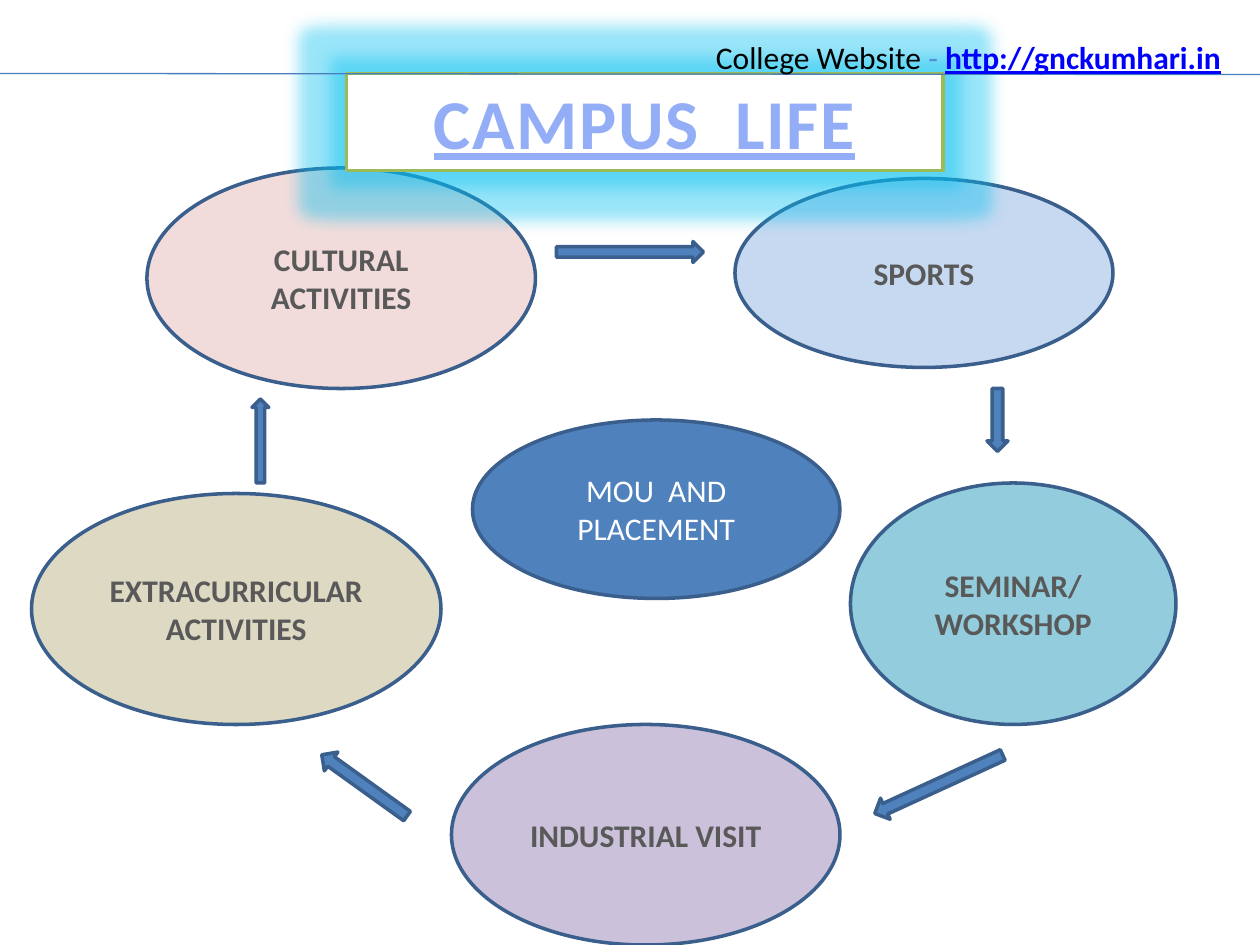
from collections import namedtuple
from dataclasses import dataclass

from lxml import etree
from pptx import Presentation
from pptx.dml.color import RGBColor
from pptx.enum import shapes, text
from pptx.oxml import ns
from pptx.util import Inches, Pt

COLS, ROWS = 120, 90
CELL = Inches(10) / COLS
Box = namedtuple("Box", "x y w h")
MSO = shapes.MSO_SHAPE


@dataclass(frozen=True)
class Theme:
    font: str = "Calibri"
    body: int = 18
    title: int = 40
    border: float = 2
    hairline: float = 0.75
    white: str = "FFFFFF"
    black: str = "000000"
    grey: str = "595959"
    blue: str = "4F81BD"
    edge: str = "3A5F8C"
    rule: str = "4B7EBC"
    green: str = "9BBB59"
    dash: str = "558ED5"
    link: str = "0000FF"
    heading: str = "93AEF7"
    glow: str = "00BEF0"
    rose: str = "F2DCDB"
    sand: str = "DDD9C3"
    sky: str = "C6D9F1"
    lilac: str = "CCC1DA"
    aqua: str = "93CDDD"


T = Theme()


def rgb(value):
    return RGBColor.from_string(value)


def place(region, x, y, w, h):
    return [round(n * CELL) for n in (region.x + x, region.y + y, w, h)]


def add_text(p, value, size=T.body, color=T.grey, bold=False, underline=False, spacing=0):
    r = p.add_run()
    r.text = value
    r.font.name, r.font.size = T.font, Pt(size)
    r.font.bold, r.font.underline = bold, underline
    r.font.color.rgb = rgb(color)
    if spacing:
        r._r.get_or_add_rPr().set("spc", str(spacing * 100))


def add_shape(slide, kind, at, fill, line=T.edge, rotation=0):
    sp = slide.shapes.add_shape(kind, *at)
    sp.shadow.inherit = False
    sp.fill.solid()
    sp.fill.fore_color.rgb = rgb(fill)
    sp.line.color.rgb = rgb(line)
    sp.line.width = Pt(T.border)
    sp.rotation = rotation
    return sp


def centered_paragraph(sp, anchor):
    tf = sp.text_frame
    tf.word_wrap = True
    tf.vertical_anchor = anchor
    p = tf.paragraphs[0]
    p.alignment = text.PP_ALIGN.CENTER
    return p


def add_glow(sp, color, radius, alpha):
    effects = sp._element.spPr.find(ns.qn("a:effectLst"))
    glow = etree.SubElement(effects, ns.qn("a:glow"), rad=str(Pt(radius)))
    clr = etree.SubElement(glow, ns.qn("a:srgbClr"), val=color)
    etree.SubElement(clr, ns.qn("a:alpha"), val=str(alpha * 1000))


def draw_cycle(slide, region):
    ovals = [
        ("CULTURAL ACTIVITIES", T.rose, (14, 0, 37, 21)),
        ("EXTRACURRICULAR ACTIVITIES", T.sand, (3, 31, 39, 22)),
        ("SPORTS", T.sky, (70, 1, 36, 18)),
        ("INDUSTRIAL VISIT", T.lilac, (43, 53, 37, 21)),
        ("SEMINAR/ WORKSHOP", T.aqua, (81, 30, 31, 23)),
        ("MOU  AND PLACEMENT", T.blue, (45, 24, 35, 17)),
    ]
    for label, fill, at in ovals:
        sp = add_shape(slide, MSO.OVAL, place(region, *at), fill)
        p = centered_paragraph(sp, text.MSO_ANCHOR.MIDDLE)
        center = fill == T.blue
        add_text(p, label, color=T.white if center else T.grey, bold=not center)

    arrows = [
        (MSO.RIGHT_ARROW, (53, 7, 14, 2), 0),
        (MSO.DOWN_ARROW, (94, 21, 2, 6), 0),
        (MSO.UP_ARROW, (33.6, 53.8, 2.2, 10), 305.7),
        (MSO.DOWN_ARROW, (88.3, 52, 2.2, 13.4), 65.4),
        (MSO.UP_ARROW, (24, 22, 1.6, 8), 0),
    ]
    for kind, at, rotation in arrows:
        add_shape(slide, kind, place(region, *at), T.blue, rotation=rotation)


def draw_header(slide, region):
    sp = add_shape(slide, MSO.RECTANGLE, place(region, 33, 7, 56.8, 9.25), T.white, T.green)
    add_glow(sp, T.glow, radius=18, alpha=40)
    p = centered_paragraph(sp, text.MSO_ANCHOR.TOP)
    add_text(p, "CAMPUS  LIFE", size=T.title, color=T.heading, bold=True,
             underline=True, spacing=1)

    x, y, w, h = place(region, 0, 7, region.w, 0.1)
    rule = slide.shapes.add_connector(shapes.MSO_CONNECTOR.STRAIGHT, x, y, x + w, y + h)
    rule.line.color.rgb = rgb(T.rule)
    rule.line.width = Pt(T.hairline)
    etree.SubElement(rule._element.spPr, ns.qn("a:effectLst"))

    tf = slide.shapes.add_textbox(*place(region, 67, 3, 52, 4.8)).text_frame
    tf.word_wrap = True
    p = tf.paragraphs[0]
    add_text(p, "College Website", color=T.black)
    add_text(p, " - ", color=T.dash)
    add_text(p, "http://gnckumhari.in", color=T.link, bold=True, underline=True)


def main():
    prs = Presentation()
    prs.slide_width, prs.slide_height = round(COLS * CELL), round(ROWS * CELL)
    slide = prs.slides.add_slide(prs.slide_layouts[6])
    draw_cycle(slide, Box(0, 16, COLS, 74))
    draw_header(slide, Box(0, 0, COLS, 16))
    prs.save("out.pptx")


if __name__ == "__main__":
    main()
